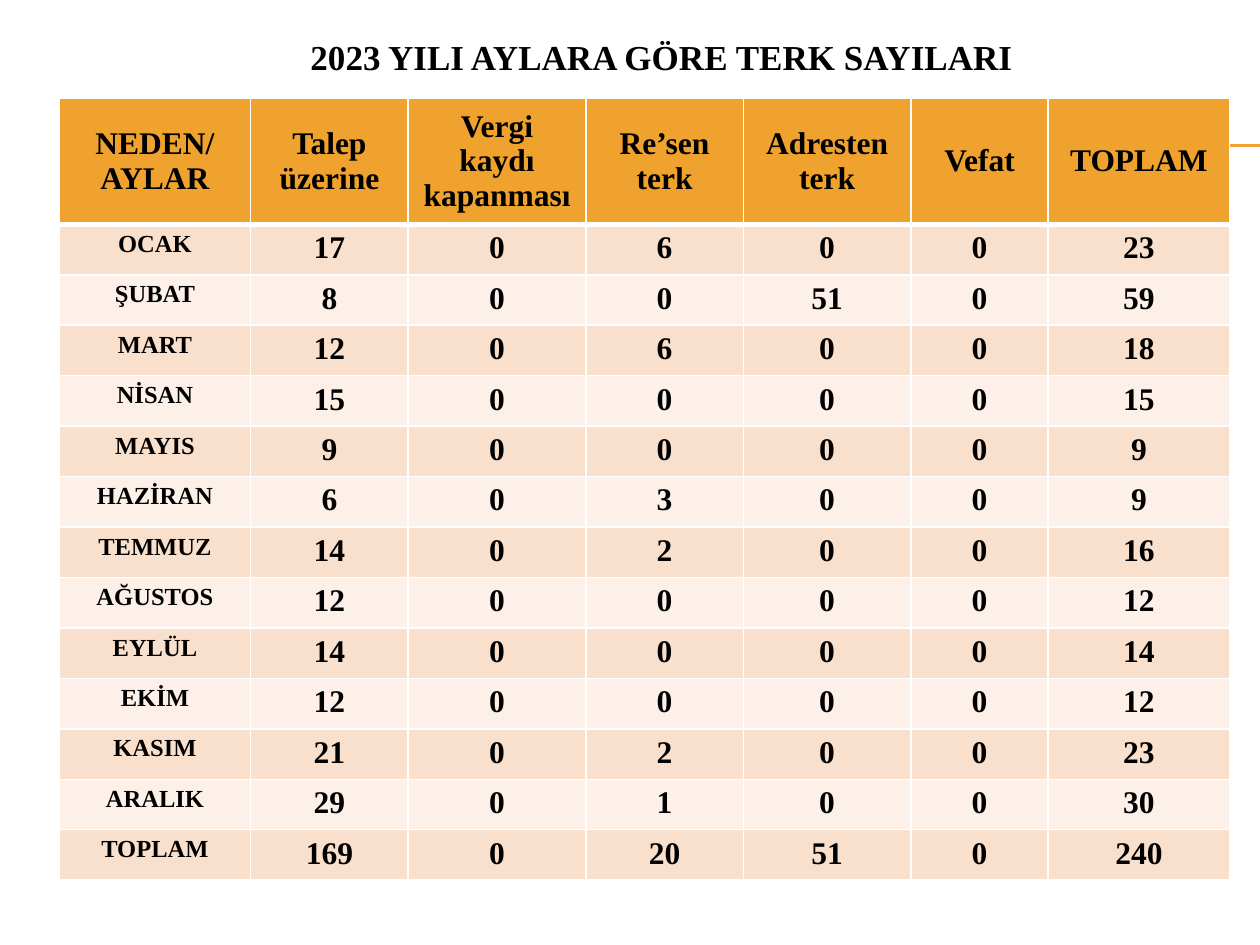
from dataclasses import dataclass

from lxml.etree import SubElement
from pptx import Presentation
from pptx.dml.color import RGBColor
from pptx.enum.shapes import MSO_CONNECTOR
from pptx.enum.text import MSO_ANCHOR, PP_ALIGN
from pptx.oxml.ns import qn
from pptx.slide import Slide
from pptx.table import _Cell
from pptx.text.text import TextFrame
from pptx.util import Inches, Pt

ORANGE, WHITE, BLACK = "F0A22E", "FFFFFF", "000000"
BANDS = ("F9E0CD", "FCF0E8")
TABLE_LEFT, TABLE_TOP = 0.47, 0.78
HEADER_HEIGHT, ROW_HEIGHT = 0.97, 0.39
COLUMN_WIDTHS = (1.52, 1.25, 1.41, 1.25, 1.33, 1.09, 1.44)
HEADINGS = ("NEDEN/ AYLAR", "Talep üzerine", "Vergi kaydı kapanması",
            "Re’sen terk", "Adresten terk", "Vefat", "TOPLAM")


@dataclass(frozen=True)
class MonthRow:
    name: str
    values: tuple[int, ...]


@dataclass(frozen=True)
class CellStyle:
    fill: str
    size: int
    anchor: MSO_ANCHOR
    top_border: float
    bottom_border: float


MONTH_ROWS = (
    MonthRow("OCAK", (17, 0, 6, 0, 0, 23)),
    MonthRow("ŞUBAT", (8, 0, 0, 51, 0, 59)),
    MonthRow("MART", (12, 0, 6, 0, 0, 18)),
    MonthRow("NİSAN", (15, 0, 0, 0, 0, 15)),
    MonthRow("MAYIS", (9, 0, 0, 0, 0, 9)),
    MonthRow("HAZİRAN", (6, 0, 3, 0, 0, 9)),
    MonthRow("TEMMUZ", (14, 0, 2, 0, 0, 16)),
    MonthRow("AĞUSTOS", (12, 0, 0, 0, 0, 12)),
    MonthRow("EYLÜL", (14, 0, 0, 0, 0, 14)),
    MonthRow("EKİM", (12, 0, 0, 0, 0, 12)),
    MonthRow("KASIM", (21, 0, 2, 0, 0, 23)),
    MonthRow("ARALIK", (29, 0, 1, 0, 0, 30)),
    MonthRow("TOPLAM", (169, 0, 20, 51, 0, 240)),
)


def color(value: str) -> RGBColor:
    return RGBColor.from_string(value)


def write_text(text_frame: TextFrame, text: str, size: int) -> None:
    paragraph = text_frame.paragraphs[0]
    paragraph.alignment = PP_ALIGN.CENTER
    run = paragraph.add_run()
    run.text = text
    font_format = {"name": "Times New Roman", "size": Pt(size), "bold": True}
    for attribute, value in font_format.items():
        setattr(run.font, attribute, value)
    run.font.color.rgb = color(BLACK)


def draw_rule(slide: Slide, top: float) -> None:
    rule = slide.shapes.add_connector(
        MSO_CONNECTOR.STRAIGHT, Inches(0.56), Inches(top), Inches(10), Inches(top))
    rule.line.color.rgb = color(ORANGE)
    rule.line.width = Pt(0.75)
    SubElement(rule._element.spPr, qn("a:effectLst"))


def draw_title(slide: Slide, text: str) -> None:
    title = slide.shapes.add_textbox(Inches(0.5), Inches(0.21), Inches(9.5), Inches(0.57))
    frame_format = {"word_wrap": True, "vertical_anchor": MSO_ANCHOR.TOP,
                    "margin_top": Inches(0.07)}
    for attribute, value in frame_format.items():
        setattr(title.text_frame, attribute, value)
    write_text(title.text_frame, text, 20)


def draw_cell(cell: _Cell, text: str, style: CellStyle) -> None:
    properties = cell._tc.get_or_add_tcPr()
    borders = {"a:lnL": 1, "a:lnR": 1, "a:lnT": style.top_border, "a:lnB": style.bottom_border}
    for tag, width in borders.items():
        border = SubElement(properties, qn(tag), w=str(Pt(width)))
        fill = SubElement(border, qn("a:solidFill"))
        SubElement(fill, qn("a:srgbClr"), val=WHITE)
    cell.fill.solid()
    cell.fill.fore_color.rgb = color(style.fill)
    cell.vertical_anchor = style.anchor
    write_text(cell.text_frame, text, style.size)


def draw_table(slide: Slide) -> None:
    height = HEADER_HEIGHT + ROW_HEIGHT * len(MONTH_ROWS)
    table = slide.shapes.add_table(
        len(MONTH_ROWS) + 1, len(COLUMN_WIDTHS), Inches(TABLE_LEFT), Inches(TABLE_TOP),
        Inches(sum(COLUMN_WIDTHS)), Inches(height)).table
    for column, width in zip(table.columns, COLUMN_WIDTHS):
        column.width = Inches(width)
    for index, row in enumerate(table.rows):
        row.height = Inches(ROW_HEIGHT if index else HEADER_HEIGHT)

    header_style = CellStyle(ORANGE, 18, MSO_ANCHOR.MIDDLE, 1, 3)
    for column_index, heading in enumerate(HEADINGS):
        draw_cell(table.cell(0, column_index), heading, header_style)
    for row_index, month in enumerate(MONTH_ROWS, start=1):
        band = BANDS[(row_index - 1) % 2]
        top_border = 3 if row_index == 1 else 1
        for column_index, value in enumerate((month.name, *month.values)):
            size = 18 if column_index else 14
            style = CellStyle(band, size, MSO_ANCHOR.TOP, top_border, 1)
            draw_cell(table.cell(row_index, column_index), str(value), style)


def main() -> None:
    presentation = Presentation()
    presentation.slide_width = Inches(10)
    presentation.slide_height = Inches(7.5)
    slide = presentation.slides.add_slide(presentation.slide_layouts[6])
    for top in (1.15, 1.16):
        draw_rule(slide, top)
    draw_title(slide, "2023 YILI AYLARA GÖRE TERK SAYILARI")
    draw_table(slide)
    presentation.save("out.pptx")


if __name__ == "__main__":
    main()
